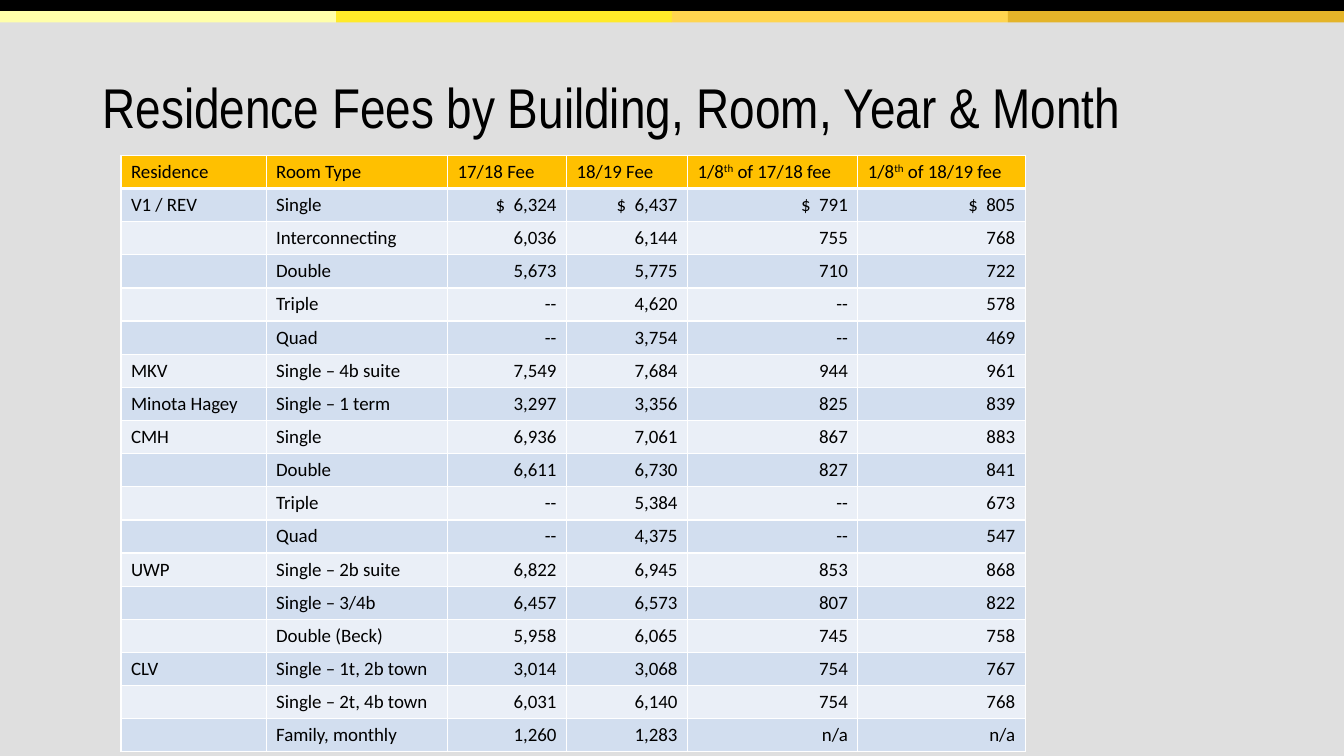
from lxml import etree
from pptx import Presentation
from pptx.dml.color import RGBColor
from pptx.enum.shapes import MSO_SHAPE
from pptx.enum.text import MSO_ANCHOR, PP_ALIGN
from pptx.oxml.ns import qn
from pptx.util import Pt

RECTANGLE = MSO_SHAPE.RECTANGLE
LEFT, RIGHT = PP_ALIGN.LEFT, PP_ALIGN.RIGHT
MIDDLE = MSO_ANCHOR.MIDDLE

COLORS = {
    "background": "DFDFDF", "text": "000000", "border": "FFFFFF",
    "header": "FFC000", "band_dark": "D2DEEF", "band_light": "EAEFF7",
    "top_bar": "000000", "pale_yellow": "FFFFAA", "yellow": "FFEA29",
    "gold": "FFD54F", "dark_gold": "E4B429",
}
STRIPES = ["pale_yellow", "yellow", "gold", "dark_gold"]
SLIDE_WIDTH, SLIDE_HEIGHT = 960, 540
COLUMN_WIDTHS = [103.7, 129.6, 85, 86.4, 121.7, 119.5]
ROW_HEIGHT = 21.6
TEXT_COLUMNS = 2

# Carets enclose superscript text
HEADER = ["Residence", "Room Type", "17/18 Fee", "18/19 Fee",
          "1/8^th^ of 17/18 fee", "1/8^th^ of 18/19 fee"]
FEES = [
    ["V1 / REV", "Single", "$  6,324", "$  6,437", "$  791", "$  805"],
    ["", "Interconnecting", "6,036", "6,144", "755", "768"],
    ["", "Double", "5,673", "5,775", "710", "722"],
    ["", "Triple", "--", "4,620", "--", "578"],
    ["", "Quad", "--", "3,754", "--", "469"],
    ["MKV", "Single – 4b suite", "7,549", "7,684", "944", "961"],
    ["Minota Hagey", "Single – 1 term", "3,297", "3,356", "825", "839"],
    ["CMH", "Single", "6,936", "7,061", "867", "883"],
    ["", "Double", "6,611", "6,730", "827", "841"],
    ["", "Triple", "--", "5,384", "--", "673"],
    ["", "Quad", "--", "4,375", "--", "547"],
    ["UWP", "Single – 2b suite", "6,822", "6,945", "853", "868"],
    ["", "Single – 3/4b", "6,457", "6,573", "807", "822"],
    ["", "Double (Beck)", "5,958", "6,065", "745", "758"],
    ["CLV", "Single – 1t, 2b town", "3,014", "3,068", "754", "767"],
    ["", "Single – 2t, 4b town", "6,031", "6,140", "754", "768"],
    ["", "Family, monthly", "1,260", "1,283", "n/a", "n/a"],
]


def color(name):
    return RGBColor.from_string(COLORS[name])


def set_font(font, name, size):
    font.name = name
    font.size = Pt(size)
    font.color.rgb = color("text")


def add_bar(slide, left, top, width, height, fill):
    bar = slide.shapes.add_shape(RECTANGLE, Pt(left), Pt(top), Pt(width), Pt(height))
    bar.shadow.inherit = False
    bar.fill.solid()
    bar.fill.fore_color.rgb = color(fill)
    bar.line.fill.background()


def add_top_band(slide, left, top, width):
    add_bar(slide, left, top, width, 9, "top_bar")
    stripe_width = width / len(STRIPES)
    for index, stripe in enumerate(STRIPES):
        add_bar(slide, left + index * stripe_width, top + 8, stripe_width, 8, stripe)


def add_title(slide, text, left, top, width, height):
    title = slide.shapes.title
    title.left, title.top = Pt(left), Pt(top)
    title.width, title.height = Pt(width), Pt(height)
    title.text_frame.text = text
    title.text_frame.vertical_anchor = MIDDLE
    paragraph = title.text_frame.paragraphs[0]
    paragraph.alignment = LEFT
    paragraph.line_spacing = 0.9
    set_font(paragraph.font, "Arial Narrow", 40)


def add_borders(cell, bottom_width):
    properties = cell._tc.get_or_add_tcPr()
    for side, width in [("L", 1), ("R", 1), ("T", 1), ("B", bottom_width)]:
        line = etree.SubElement(properties, qn("a:ln" + side), w=str(Pt(width)))
        fill = etree.SubElement(line, qn("a:solidFill"))
        etree.SubElement(fill, qn("a:srgbClr"), val=COLORS["border"])


def fill_cell(cell, text, fill, alignment, bottom_width):
    add_borders(cell, bottom_width)
    cell.fill.solid()
    cell.fill.fore_color.rgb = color(fill)
    paragraph = cell.text_frame.paragraphs[0]
    paragraph.alignment = alignment
    set_font(paragraph.font, "Calibri", 13.5)
    if not text:
        # Keeps an empty cell from growing its row
        paragraph._p.get_or_add_endParaRPr().set("sz", "1350")
        return
    for index, part in enumerate(text.split("^")):
        run = paragraph.add_run()
        run.text = part
        if index % 2:
            run.font._element.set("baseline", "30000")


def add_fee_table(slide, left, top):
    rows = [HEADER] + FEES
    frame = slide.shapes.add_table(
        len(rows), len(HEADER), Pt(left), Pt(top),
        Pt(sum(COLUMN_WIDTHS)), Pt(ROW_HEIGHT * len(rows)))
    table = frame.table
    table.first_row = False
    table.horz_banding = False
    for column, width in zip(table.columns, COLUMN_WIDTHS):
        column.width = Pt(width)
    for row_index, row in enumerate(rows):
        is_header = row_index == 0
        band = "band_dark" if row_index % 2 else "band_light"
        for column_index, text in enumerate(row):
            is_text = is_header or column_index < TEXT_COLUMNS
            fill_cell(table.cell(row_index, column_index), text,
                      "header" if is_header else band,
                      LEFT if is_text else RIGHT, 3 if is_header else 1)


def main():
    presentation = Presentation()
    presentation.slide_width = Pt(SLIDE_WIDTH)
    presentation.slide_height = Pt(SLIDE_HEIGHT)
    slide = presentation.slides.add_slide(presentation.slide_layouts[5])
    slide.background.fill.solid()
    slide.background.fill.fore_color.rgb = color("background")
    add_top_band(slide, 0, 0, SLIDE_WIDTH)
    add_title(slide, "Residence Fees by Building, Room, Year & Month", 66, 57, 828, 43)
    add_fee_table(slide, 86.4, 111)
    presentation.save("out.pptx")


if __name__ == "__main__":
    main()
